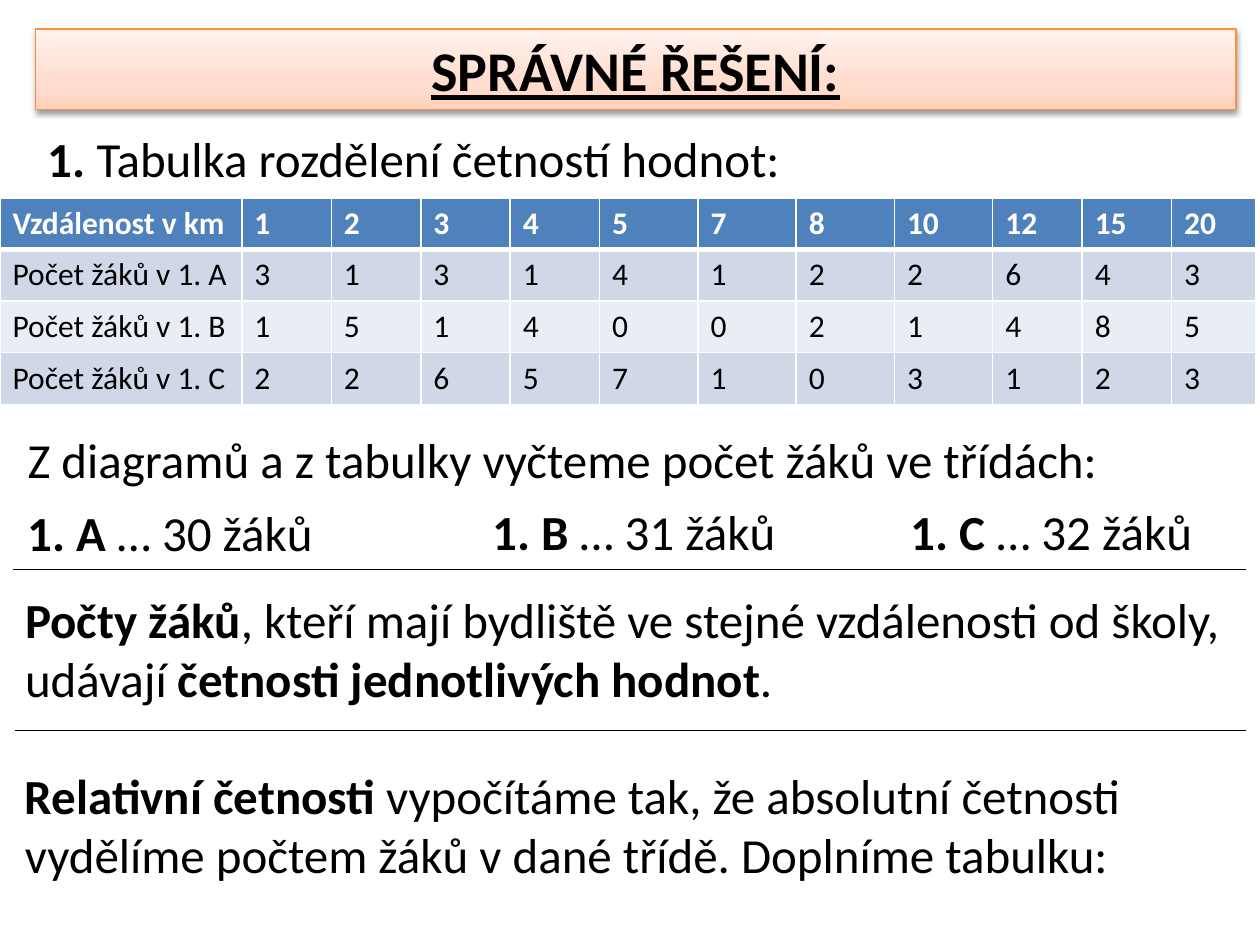
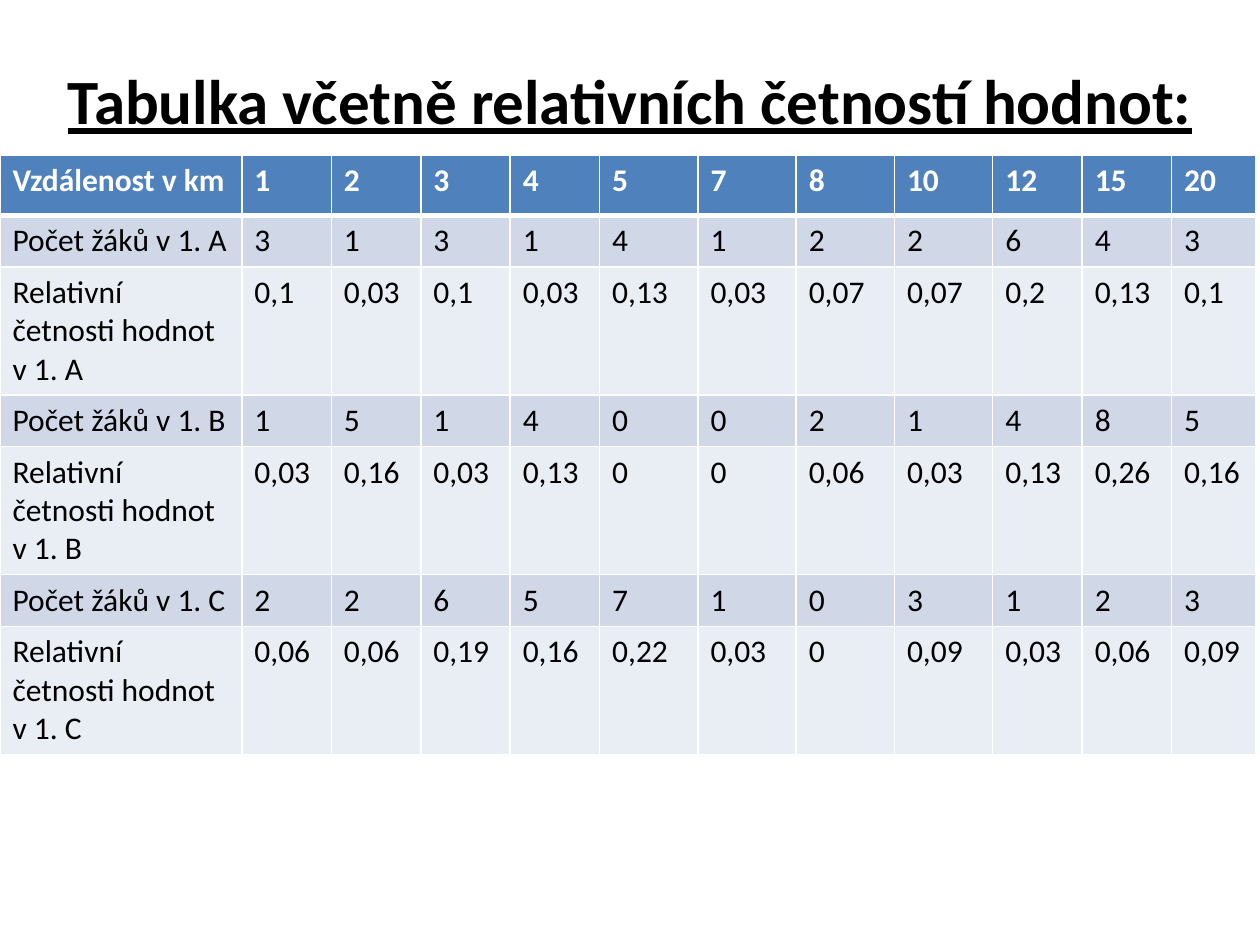
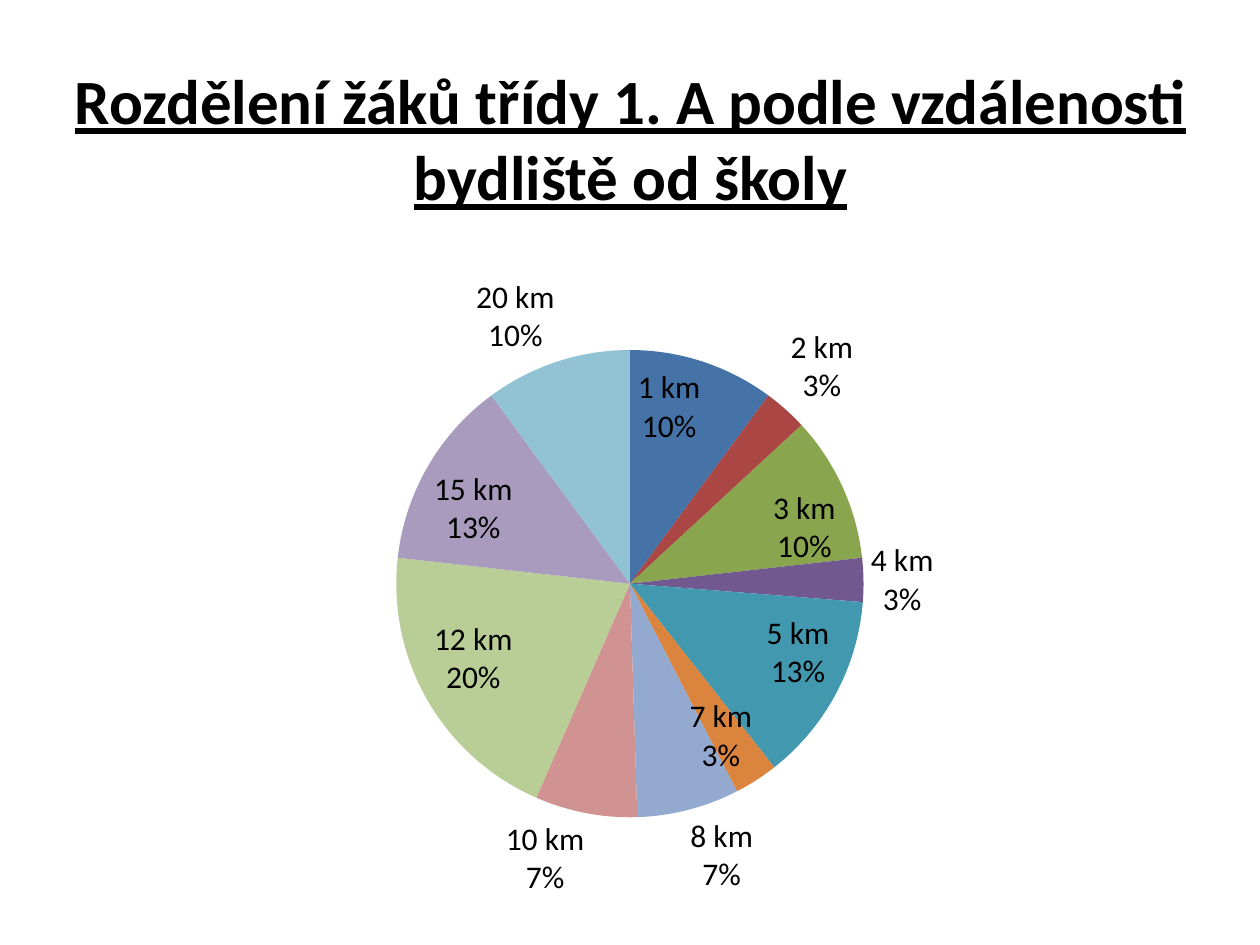
import copy

import pptx
import pptx.chart.data
import pptx.dml.color
import pptx.enum.chart
import pptx.enum.shapes
import pptx.enum.text
import pptx.oxml
import pptx.oxml.ns
import pptx.util
from pptx.util import Inches

FONT = "Calibri"
BLACK, WHITE = "000000", "FFFFFF"
HEADER_FILL, BAND_FILLS = "4F81BD", ("D0D8E8", "E9EDF4")
BANNER_LINE = "F69240"
BANNER_STOPS = [(0, "FFD2BD"), (0.35, "FFDED0"), (1, "FFF2ED")]

DISTANCES = [1, 2, 3, 4, 5, 7, 8, 10, 12, 15, 20]
COUNTS = {
    "1. A": [3, 1, 3, 1, 4, 1, 2, 2, 6, 4, 3],
    "1. B": [1, 5, 1, 4, 0, 0, 2, 1, 4, 8, 5],
    "1. C": [2, 2, 6, 5, 7, 1, 0, 3, 1, 2, 3],
}
COLUMN_WIDTHS = [1.92] + [0.71] * 4 + [0.78] * 4 + [0.71] * 2 + [0.67]
ROW_HEIGHT, TALL_ROW_HEIGHT = 0.41, 1.0

# Each box: position and size, wrapping, paragraphs of (text, bold) runs
SOLUTION_TEXTS = [
    ((0.28, 0.97, 6.08, 0.57), False,
     [[("1. ", True), ("Tabulka rozdělení četností hodnot:", False)]]),
    ((0.12, 3.36, 8.78, 0.57), False,
     [[("Z diagramů a z tabulky vyčteme počet žáků ve třídách:", False)]]),
    ((0.1, 4.63, 9.79, 1.04), False,
     [[("Počty žáků", True),
       (", kteří mají bydliště ve stejné vzdálenosti od školy,", False)],
      [("udávají ", False), ("četnosti jednotlivých hodnot", True), (".", False)]]),
    ((0.1, 6.03, 9.67, 1.04), True,
     [[("Relativní četnosti ", True),
       ("vypočítáme tak, že absolutní četnosti", False)],
      [("vydělíme počtem žáků v dané třídě. Doplníme tabulku:", False)]]),
]
CLASS_TOTAL_BOXES = [(0.12, 3.94, 2.48, 0.57), (3.81, 3.93, 2.47, 0.57),
                     (7.13, 3.93, 2.46, 0.57)]
RULES = [(0.1, 4.52), (0.12, 5.8)]
RULE_END = 9.89

SLICE_COLORS = ["4572A7", "AA4643", "89A54E", "71588F", "4198AF", "DB843D",
                "93A9CF", "D19392", "B9CD96", "A99BBD", "91C3D5"]
OUTSIDE_LABELS = {2, 4, 8, 10, 20}
PIE_LAYOUT = {"x": 0.31, "y": 0.14, "w": 0.38, "h": 0.71}


def rgb(color):
    return pptx.dml.color.RGBColor.from_string(color)


def qn(tag):
    return pptx.oxml.ns.qn(tag)


def xml(text):
    return pptx.oxml.parse_xml(text.replace(
        "NS", pptx.oxml.ns.nsdecls("a", "c"), 1))


def set_font(font, size, color=BLACK, bold=False, underline=False):
    font.name, font.size = FONT, pptx.util.Pt(size)
    font.color.rgb = rgb(color)
    font.bold = bold
    if underline:
        font.underline = True


def add_run(p, text, size, **style):
    r = p.add_run()
    r.text = text
    set_font(r.font, size, **style)


def add_text(s, box, paragraphs, wrap, size=28, centered=False, underline=False):
    tf = s.shapes.add_textbox(*map(Inches, box)).text_frame
    tf.word_wrap = wrap
    tf.auto_size = pptx.enum.text.MSO_AUTO_SIZE.SHAPE_TO_FIT_TEXT
    for i, runs in enumerate(paragraphs):
        p = tf.add_paragraph() if i else tf.paragraphs[0]
        if centered:
            p.alignment = pptx.enum.text.PP_ALIGN.CENTER
        for text, bold in runs:
            add_run(p, text, size, bold=bold, underline=underline)


def add_title(s, box, text):
    add_text(s, box, [[(text, True)]], True, size=36, centered=True, underline=True)


def add_banner(s, text):
    sp = s.shapes.add_shape(pptx.enum.shapes.MSO_SHAPE.RECTANGLE,
                            *map(Inches, (0.28, 0.23, 9.53, 0.64)))
    sp.fill.gradient()
    sp.fill.gradient_angle = 90
    stop_list = next(sp.element.spPr.iter(qn("a:gsLst")))
    stop_list.append(copy.deepcopy(stop_list[0]))
    for stop, (position, color) in zip(sp.fill.gradient_stops, BANNER_STOPS):
        stop.position = position
        stop.color.rgb = rgb(color)
    sp.line.color.rgb = rgb(BANNER_LINE)
    sp.line.width = pptx.util.Pt(0.75)
    sp.shadow.inherit = False
    sp.element.spPr.find(qn("a:effectLst")).append(xml(
        '<a:outerShdw NS blurRad="40000" dist="20000" dir="5400000" rotWithShape="0">'
        '<a:srgbClr val="000000"><a:alpha val="38000"/></a:srgbClr></a:outerShdw>'))
    p = sp.text_frame.paragraphs[0]
    p.alignment = pptx.enum.text.PP_ALIGN.CENTER
    add_run(p, text, 32, bold=True, underline=True)


def add_rule(s, left, top):
    line = s.shapes.add_connector(
        pptx.enum.shapes.MSO_CONNECTOR.STRAIGHT,
        *map(Inches, (left, top, RULE_END, top)))
    line.line.color.rgb = rgb(BLACK)
    line.line.width = pptx.util.Pt(0.75)
    line.element.spPr.append(xml("<a:effectLst NS/>"))


def set_borders(cell, row):
    """White grid, with a thicker line between header and body."""
    widths = {"L": 1, "R": 1, "T": 3 if row == 1 else 1, "B": 1 if row else 3}
    for side, width in widths.items():
        cell._tc.get_or_add_tcPr().append(xml(
            f'<a:ln{side} NS w="{width * 12700}"><a:solidFill>'
            f'<a:srgbClr val="{WHITE}"/></a:solidFill></a:ln{side}>'))


def add_distance_table(s, top, rows, heights):
    rows = [["Vzdálenost v km"] + DISTANCES] + rows
    table = s.shapes.add_table(
        len(rows), len(COLUMN_WIDTHS), 0, Inches(top),
        Inches(sum(COLUMN_WIDTHS)), Inches(sum(heights))).table
    for column, width in zip(table.columns, COLUMN_WIDTHS):
        column.width = Inches(width)
    for i, (values, height) in enumerate(zip(rows, heights)):
        table.rows[i].height = Inches(height)
        for cell, value in zip(table.rows[i].cells, values):
            set_borders(cell, i)
            cell.fill.solid()
            cell.fill.fore_color.rgb = rgb(BAND_FILLS[(i - 1) % 2] if i else HEADER_FILL)
            add_run(cell.text_frame.paragraphs[0], str(value), 18,
                    color=BLACK if i else WHITE, bold=not i)


def count_row(name):
    return [f"Počet žáků v {name}"] + COUNTS[name]


def relative_row(name):
    total = sum(COUNTS[name])
    shares = [f"{round(n / total, 2):g}".replace(".", ",") for n in COUNTS[name]]
    return [f"Relativní četnosti hodnot v {name}"] + shares


def label_slice(point, outside):
    """Show category and percentage on two lines."""
    positions = pptx.enum.chart.XL_LABEL_POSITION
    label = point.data_label
    set_font(label.font, 18)
    label.position = positions.OUTSIDE_END if outside else positions.INSIDE_END
    d_lbl = label._dLbl
    for tag, shown in (("showVal", 0), ("showCatName", 1), ("showPercent", 1)):
        d_lbl.find(qn(f"c:{tag}")).set("val", str(shown))
    last_flag = d_lbl.find(qn("c:showBubbleSize"))
    last_flag.addnext(xml("<c:separator NS>\n</c:separator>"))


def add_pie(s, name):
    data = pptx.chart.data.CategoryChartData()
    data.categories = [f"{d} km" for d in DISTANCES]
    total = sum(COUNTS[name])
    data.add_series("Series 1", [round(100 * n / total) for n in COUNTS[name]])
    chart = s.shapes.add_chart(pptx.enum.chart.XL_CHART_TYPE.PIE,
                               *map(Inches, (0.12, 2.02, 9.76, 5.28)), data).chart
    chart.has_legend = chart.has_title = False
    set_font(chart.font, 18)
    plot = chart.plots[0]
    plot.vary_by_categories = True
    for i, (distance, color) in enumerate(zip(DISTANCES, SLICE_COLORS)):
        point = plot.series[0].points[i]
        point.format.fill.solid()
        point.format.fill.fore_color.rgb = rgb(color)
        label_slice(point, distance in OUTSIDE_LABELS)
    plot_area = next(chart.element.iter(qn("c:plotArea")))
    for old in plot_area.findall(qn("c:layout")):
        plot_area.remove(old)
    sizes = "".join(f'<c:{k} val="{v}"/>' for k, v in PIE_LAYOUT.items())
    plot_area.insert(0, xml(
        '<c:layout NS><c:manualLayout><c:layoutTarget val="inner"/>'
        f'<c:xMode val="edge"/><c:yMode val="edge"/>{sizes}'
        '</c:manualLayout></c:layout>'))


def build_solution(s):
    add_banner(s, "SPRÁVNÉ ŘEŠENÍ:")
    add_distance_table(s, 1.57, [count_row(name) for name in COUNTS], [ROW_HEIGHT] * 4)
    for box, wrap, paragraphs in SOLUTION_TEXTS:
        add_text(s, box, paragraphs, wrap)
    for box, (name, counts) in zip(CLASS_TOTAL_BOXES, COUNTS.items()):
        add_text(s, box, [[(f"{name} ", True), (f"… {sum(counts)} žáků", False)]], False)
    for left, top in RULES:
        add_rule(s, left, top)


def build_relative_table(s):
    rows = [row(name) for name in COUNTS for row in (count_row, relative_row)]
    add_distance_table(s, 1.23, rows, [0.48] + [ROW_HEIGHT, TALL_ROW_HEIGHT] * len(COUNTS))
    add_title(s, (0.12, 0.44, 9.76, 0.71), "Tabulka včetně relativních četností hodnot:")


def build_pie(s):
    add_title(s, (0.28, 0.44, 9.45, 1.31),
              "Rozdělení žáků třídy 1. A podle vzdálenosti bydliště od školy")
    add_pie(s, "1. A")


def main():
    prs = pptx.Presentation()
    prs.slide_width, prs.slide_height = Inches(10), Inches(7.5)
    for build in (build_solution, build_relative_table, build_pie):
        build(prs.slides.add_slide(prs.slide_layouts[6]))
    prs.save("out.pptx")


if __name__ == "__main__":
    main()
